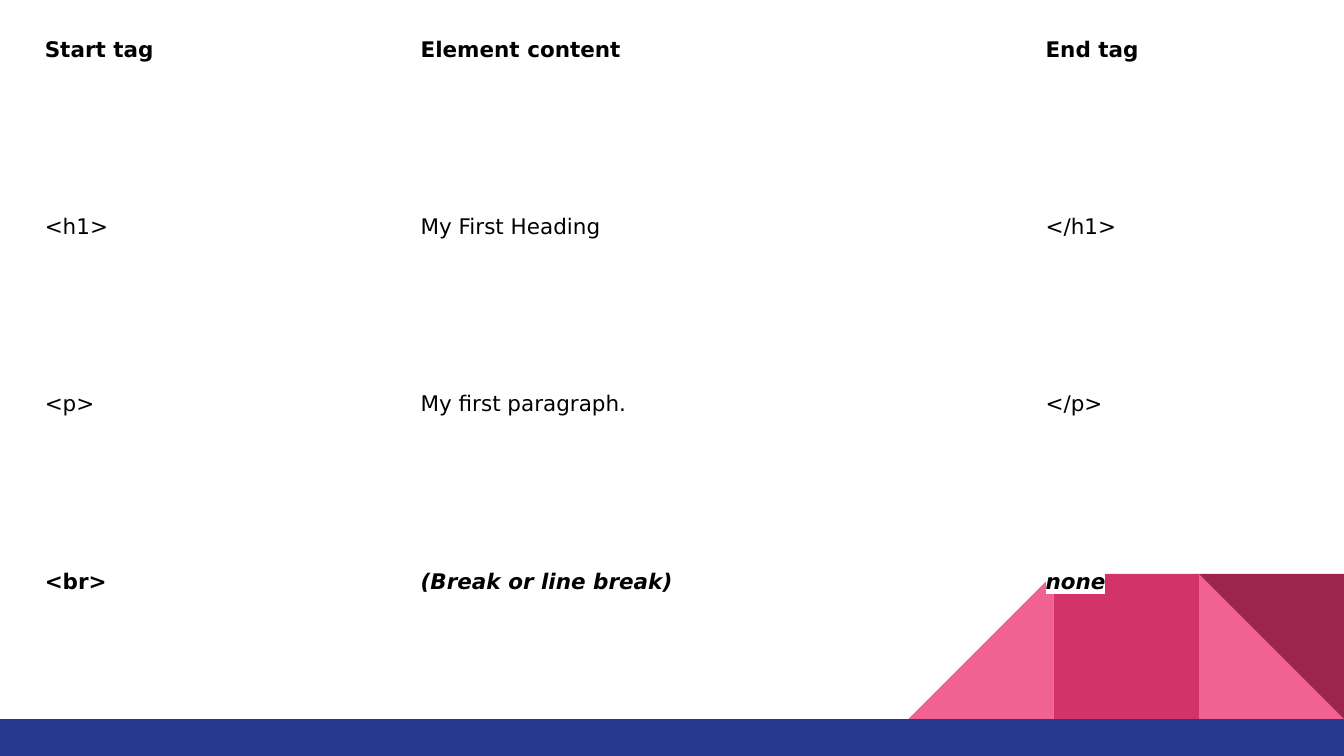
from dataclasses import dataclass

from lxml.etree import SubElement
from pptx import Presentation
from pptx.dml.color import RGBColor
from pptx.enum.shapes import MSO_SHAPE
from pptx.oxml import parse_xml
from pptx.oxml.ns import nsdecls, qn
from pptx.util import Pt


@dataclass(frozen=True)
class Theme:
    font: str = "DejaVu Sans"
    size: float = 11.5
    text: str = "000000"
    paper: str = "FFFFFF"
    light: str = "F06292"
    middle: str = "D23369"
    dark: str = "9C254D"
    bar: str = "2A3990"


@dataclass(frozen=True)
class Box:
    left: float
    top: float
    width: float
    height: float


THEME = Theme()
PAGE = Box(0, 0, 720, 405)
NO_GRID_STYLE = "{2D5ABB26-0587-4C30-8999-92F81FD0307C}"
COLUMN_WIDTHS = (207.36, 334.8, 167.76)
ROWS = (
    (("Start tag", "Element content", "End tag"), True, False),
    (("<h1>", "My First Heading", "</h1>"), False, False),
    (("<p>", "My first paragraph.", "</p>"), False, False),
    (("<br>", "(Break or line break)", "none"), True, True),
)


def add_block(shapes, kind, box, color, flip=False, rotation=0):
    block = shapes.add_shape(
        kind, Pt(box.left), Pt(box.top), Pt(box.width), Pt(box.height)
    )
    block.shadow.inherit = False
    block.fill.solid()
    block.fill.fore_color.rgb = RGBColor.from_string(color)
    block.line.fill.background()
    block.rotation = rotation
    if flip:
        block.element.spPr.xfrm.set("flipH", "1")


def add_corner_art(page, box):
    group = page.shapes.add_group_shape()
    unit = box.width / 3
    triangle = MSO_SHAPE.RIGHT_TRIANGLE
    blocks = (
        (2, triangle, THEME.light, False, 0),
        (0, triangle, THEME.light, True, 0),
        (1, MSO_SHAPE.RECTANGLE, THEME.middle, False, 0),
        (2, triangle, THEME.dark, False, 180),
    )
    for column, kind, color, flip, rotation in blocks:
        place = Box(box.left + column * unit, box.top, unit, box.height)
        add_block(group.shapes, kind, place, color, flip, rotation)


def add_footer_bar(page, box):
    add_block(page.shapes, MSO_SHAPE.RECTANGLE, box, THEME.bar)


def write_text(para, text, bold=False, italic=False):
    para.line_spacing = 1.15
    para.space_before = para.space_after = Pt(15)
    span = para.add_run()
    span.text = text
    font = span.font
    font.size = Pt(THEME.size)
    font.bold = bold
    font.italic = italic
    font.color.rgb = RGBColor.from_string(THEME.text)
    font.name = THEME.font
    highlight = parse_xml(
        f'<a:highlight {nsdecls("a")}><a:srgbClr val="{THEME.paper}"/></a:highlight>'
    )
    span.font._element.find(qn("a:solidFill")).addnext(highlight)


def clear_fill(cell):
    cell.fill.solid()
    cell.fill.fore_color.rgb = RGBColor.from_string(THEME.paper)
    color = cell.fill._xPr.find(f"{qn('a:solidFill')}/{qn('a:srgbClr')}")
    SubElement(color, qn("a:alpha")).set("val", "0")


def add_tag_table(page, box):
    frame = page.shapes.add_table(
        len(ROWS), len(COLUMN_WIDTHS),
        Pt(box.left), Pt(box.top), Pt(box.width), Pt(box.height),
    )
    table = frame.table
    table.first_row = table.horz_banding = False
    frame.element.find(f".//{qn('a:tableStyleId')}").text = NO_GRID_STYLE
    for column, width in zip(table.columns, COLUMN_WIDTHS):
        column.width = Pt(width)
    for row, (texts, bold, italic) in zip(table.rows, ROWS):
        row.height = Pt(box.height / len(ROWS))
        for index, (cell, text) in enumerate(zip(row.cells, texts)):
            cell.margin_left = Pt(6 if index else 12)
            cell.margin_top = cell.margin_right = cell.margin_bottom = Pt(6)
            clear_fill(cell)
            write_text(
                cell.text_frame.paragraphs[0], text,
                bold=bold, italic=italic and index > 0,
            )


def main():
    deck = Presentation()
    deck.slide_width, deck.slide_height = Pt(PAGE.width), Pt(PAGE.height)
    page = deck.slides.add_slide(deck.slide_layouts[6])
    page.background.fill.solid()
    page.background.fill.fore_color.rgb = RGBColor.from_string(THEME.paper)

    bar_height, unit = 19.8, 77.8
    bar_top = PAGE.height - bar_height
    add_corner_art(
        page, Box(PAGE.width - 3 * unit, bar_top - unit, 3 * unit, unit)
    )
    add_footer_bar(page, Box(0, bar_top, PAGE.width, bar_height))
    add_tag_table(page, Box(12, 12, sum(COLUMN_WIDTHS), 380))
    deck.save("out.pptx")


if __name__ == "__main__":
    main()
